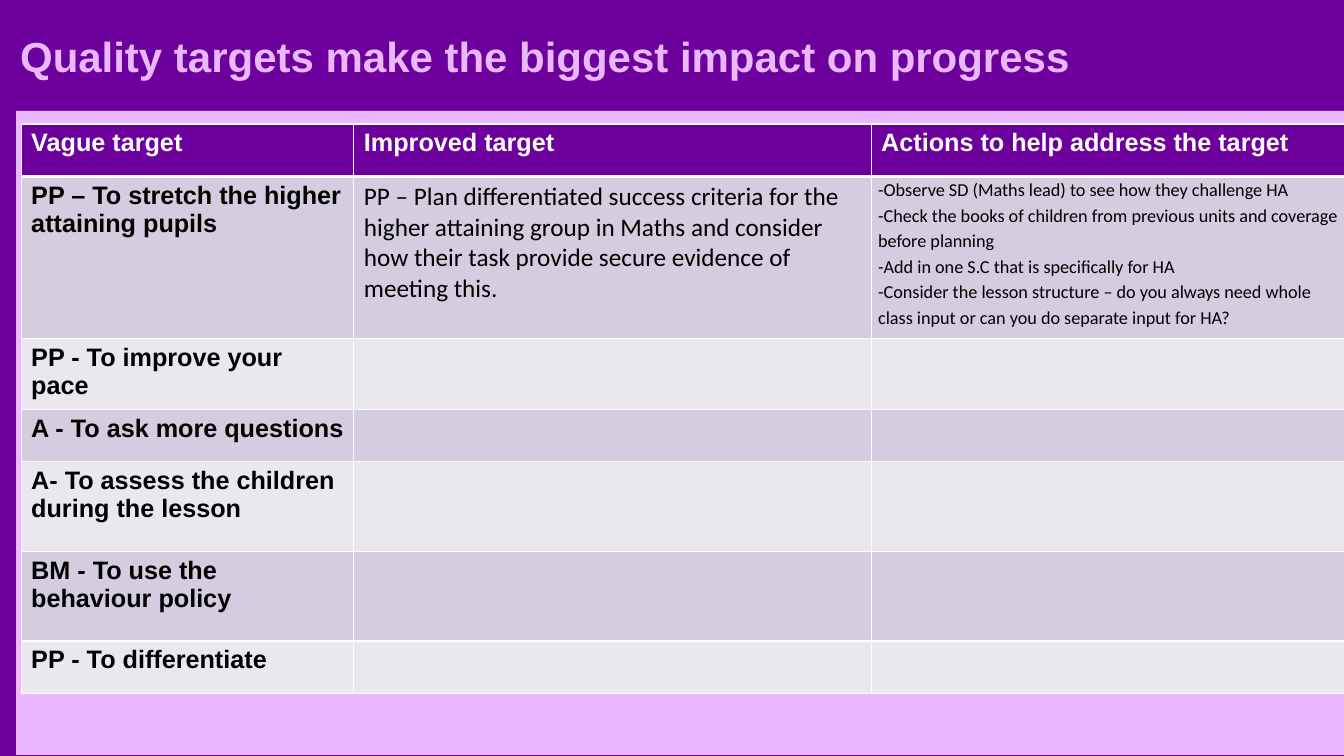
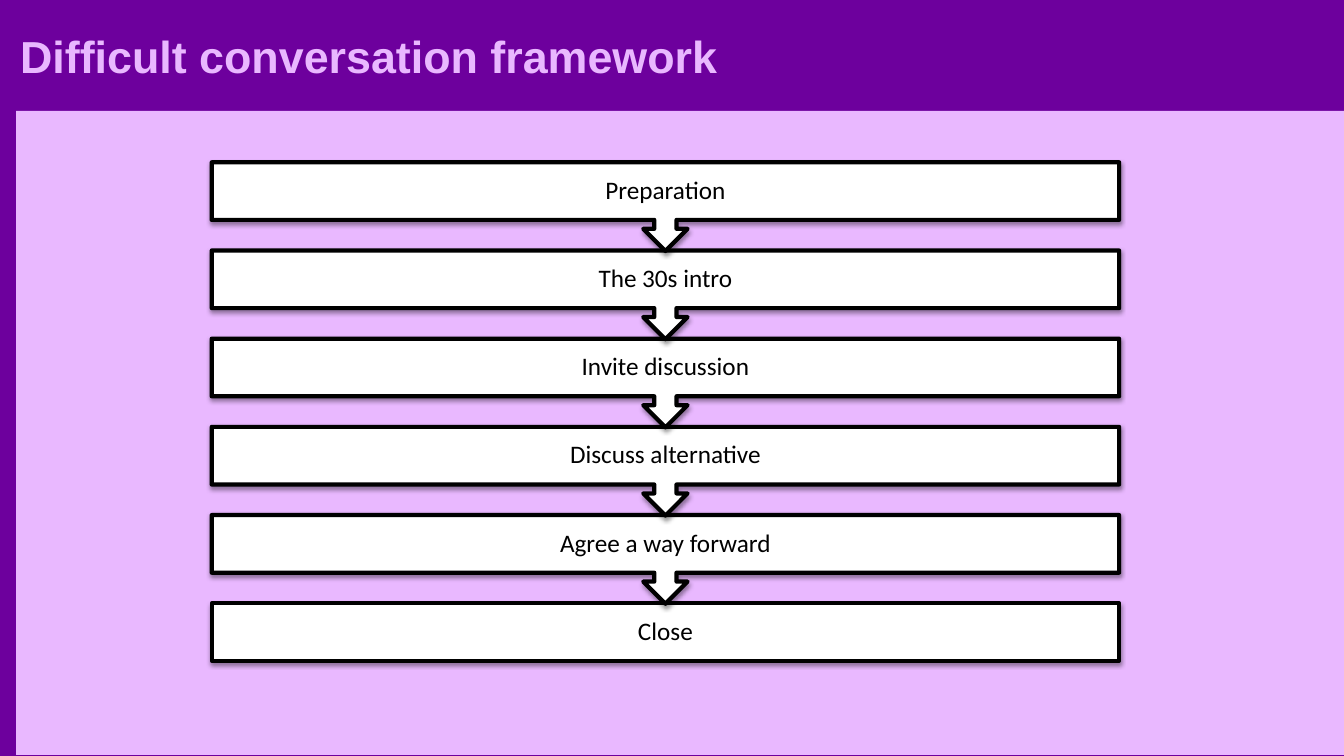
from lxml import etree
from pptx import Presentation
from pptx.dml.color import RGBColor
from pptx.enum.shapes import MSO_SHAPE
from pptx.enum.text import MSO_ANCHOR, PP_ALIGN
from pptx.oxml import parse_xml
from pptx.oxml.ns import nsdecls, qn
from pptx.util import Inches, Pt

RECT = MSO_SHAPE.RECTANGLE
CALLOUT = MSO_SHAPE.DOWN_ARROW_CALLOUT
MIDDLE = MSO_ANCHOR.MIDDLE
CENTER = PP_ALIGN.CENTER

PURPLE, LILAC = "6D009D", "E9B8FF"
WHITE, BLACK = "FFFFFF", "000000"
BANDS = "D4CCDF", "EBE7EF"
HEAD, BODY = "Arial", "Calibri"

COLS = 3.3, 5.13, 4.7
ROWS = 0.52, 1.61, 0.65, 0.52, 0.89, 0.89, 0.52
HEADERS = "Vague target", "Improved target", "Actions to help address the target"
VAGUE = (
    "PP – To stretch the higher attaining pupils",
    "PP - To improve your pace",
    "A - To ask more questions",
    "A- To assess the children during the lesson",
    "BM - To use the behaviour policy",
    "PP - To differentiate",
)
IMPROVED = (
    "PP – Plan differentiated success criteria for the higher attaining group "
    "in Maths and consider how their task provide secure evidence of meeting this."
)
ACTIONS = (
    "-Observe SD (Maths lead) to see how they challenge HA",
    "-Check the books of children from previous units and coverage before planning",
    "-Add in one S.C that is specifically for HA",
    "-Consider the lesson structure – do you always need whole class input "
    "or can you do separate input for HA?",
)
STEPS = (
    "Preparation",
    "The 30s intro",
    "Invite discussion",
    "Discuss alternative",
    "Agree a way forward",
    "Close",
)


def paint(fmt, color):
    """Give a fill one solid colour."""
    fmt.solid()
    fmt.fore_color.rgb = RGBColor.from_string(color)


def write(frame, lines, size, face, color, bold=False, spacing=None):
    """Fill a text frame, one paragraph a line, and return the paragraphs."""
    frame.text = "\n".join(lines)
    for para in frame.paragraphs:
        font = para.font
        font.size, font.name, font.bold = Pt(size), face, bold
        font.color.rgb = RGBColor.from_string(color)
        if spacing:
            para.line_spacing = spacing
    return frame.paragraphs


def add_box(slide, kind, box, color):
    shape = slide.shapes.add_shape(kind, *map(Inches, box))
    shape.shadow.inherit = False
    paint(shape.fill, color)
    shape.line.fill.background()
    return shape


def add_slide(deck, title, size):
    """Start a slide with the shared background, panel, band and title."""
    slide = deck.slides.add_slide(deck.slide_layouts[6])
    paint(slide.background.fill, PURPLE)
    add_box(slide, RECT, (0.16, 1.1, 13.18, 6.39), LILAC)
    band = add_box(slide, RECT, (0, 0, 10.84, 1.09), PURPLE)
    text = slide.shapes.add_textbox(0, Inches(0.01), band.width, Inches(1.08))
    frame = text.text_frame
    frame.word_wrap = True
    frame.vertical_anchor = MIDDLE
    frame.margin_left = Inches(0.2)
    write(frame, [title], size, HEAD, LILAC, bold=True)
    return slide


def edge(cell, **widths):
    """Draw white cell borders; keys are L, R, T and B, widths in points."""
    props = cell._tc.get_or_add_tcPr()
    for side, width in widths.items():
        props.append(parse_xml(
            f'<a:ln{side} {nsdecls("a")} w="{Pt(width)}"><a:solidFill>'
            f'<a:srgbClr val="{WHITE}"/></a:solidFill></a:ln{side}>'))


def add_grid(slide, left, top):
    """Place the table of targets at a corner."""
    table = slide.shapes.add_table(
        len(ROWS), len(COLS), Inches(left), Inches(top),
        Inches(sum(COLS)), Inches(sum(ROWS))).table
    table.horz_banding = False
    for col, width in zip(table.columns, COLS):
        col.width = Inches(width)
    for i, (row, height) in enumerate(zip(table.rows, ROWS)):
        row.height = Inches(height)
        for cell in row.cells:
            edge(cell, L=1, R=1, T=3 if i == 1 else 1, B=3 if i == 0 else 1)
            paint(cell.fill, BANDS[(i - 1) % 2] if i else PURPLE)

    for j, label in enumerate(HEADERS):
        write(table.cell(0, j).text_frame, [label], 18, HEAD, WHITE, bold=True)
    for i, target in enumerate(VAGUE, 1):
        write(table.cell(i, 0).text_frame, [target], 18, HEAD, BLACK, bold=True)
    write(table.cell(1, 1).text_frame, [IMPROVED], 18, BODY, BLACK)
    cell = table.cell(1, 2)
    cell.margin_left = cell.margin_right = Inches(0.07)
    cell.margin_top = cell.margin_bottom = 0
    write(cell.text_frame, ACTIONS, 13, BODY, BLACK, spacing=1.15)


def outline(shape):
    """Add a thick round-cornered line and a soft shadow below."""
    line = shape.line
    paint(line.fill, BLACK)
    line.width = Pt(3)
    props = shape._element.spPr
    etree.SubElement(props.find(qn("a:ln")), qn("a:round"))
    props.find(qn("a:effectLst")).append(parse_xml(
        f'<a:outerShdw {nsdecls("a")} blurRad="{Pt(3.1)}" dist="{Pt(1.6)}" '
        f'dir="5400000" rotWithShape="0"><a:srgbClr val="{BLACK}">'
        '<a:alpha val="38000"/></a:srgbClr></a:outerShdw>'))


def add_flow(slide, left, top, width, pitch):
    """Stack the steps; each callout's arrow reaches the step below."""
    last = len(STEPS) - 1
    for i in range(last, -1, -1):
        kind, height = (RECT, 0.57) if i == last else (CALLOUT, 0.88)
        step = add_box(slide, kind, (left, top + i * pitch, width, height), WHITE)
        outline(step)
        frame = step.text_frame
        frame.word_wrap = True
        frame.vertical_anchor = MIDDLE
        frame.margin_left = frame.margin_right = Inches(0.14)
        frame.margin_top = frame.margin_bottom = Inches(0.14)
        para = write(frame, [STEPS[i]], 18, BODY, BLACK, spacing=0.9)[0]
        para.alignment = CENTER


def main():
    deck = Presentation()
    deck.slide_width, deck.slide_height = Inches(13.33), Inches(7.5)
    targets = add_slide(deck, "Quality targets make the biggest impact on progress", 30)
    add_grid(targets, 0.21, 1.23)
    talk = add_slide(deck, "Difficult conversation framework", 32)
    add_flow(talk, 2.1, 1.61, 9, 0.875)
    deck.save("out.pptx")


if __name__ == "__main__":
    main()
